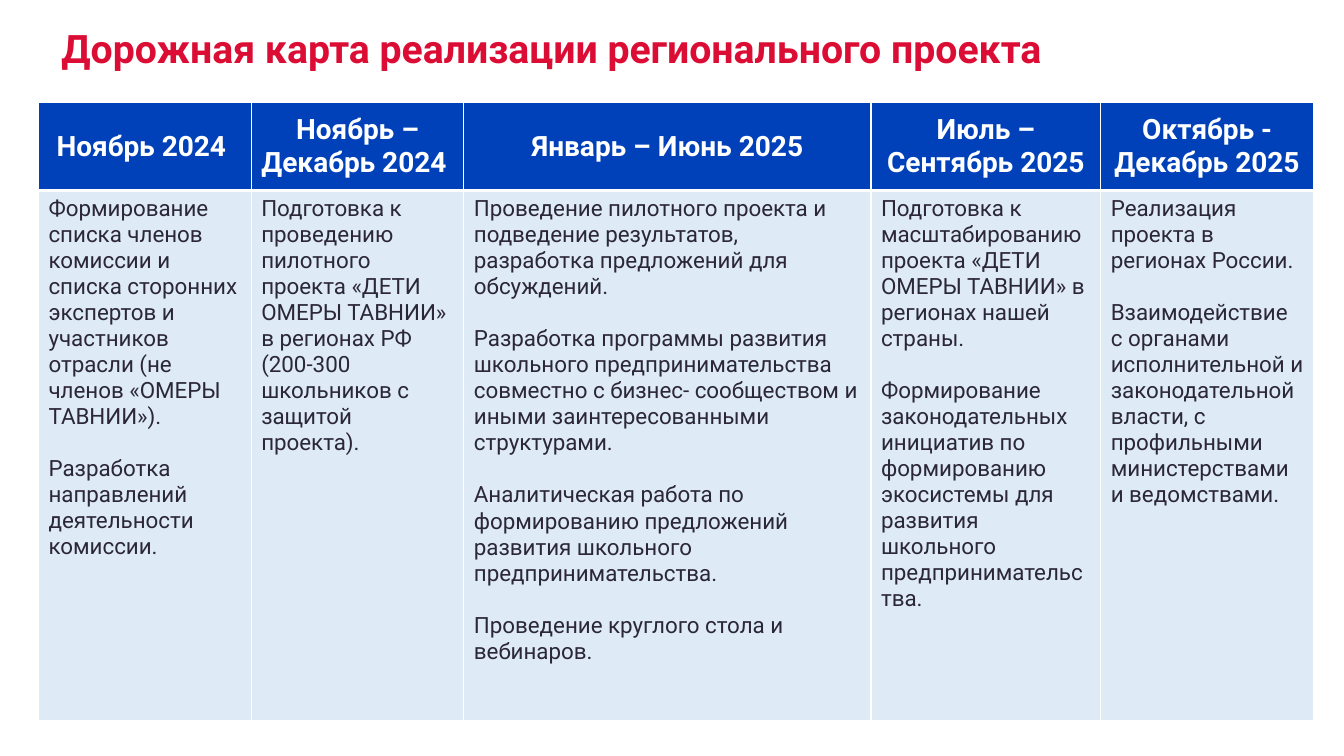
from dataclasses import dataclass

from lxml.etree import SubElement
from pptx import Presentation
from pptx.dml.color import RGBColor
from pptx.enum.text import MSO_ANCHOR, PP_ALIGN
from pptx.oxml.ns import qn
from pptx.util import Cm, Pt


@dataclass(frozen=True)
class Theme:
    font: str = "Roboto"
    red: str = "DB0D35"
    blue: str = "0041BA"
    pale: str = "DEEBF7"
    white: str = "FFFFFF"
    ink: str = "2C2738"
    title_size: float = 28
    head_size: float = 20
    body_size: float = 16
    body_gap: float = 18.75


@dataclass(frozen=True)
class Stage:
    period: str
    width: float
    tasks: tuple[str, ...]


THEME = Theme()
HEAD_HEIGHT, BODY_HEIGHT = 2.21, 13.36

STAGES = [
    Stage("Ноябрь 2024 ", 5.36, (
        "Формирование списка членов комиссии и списка сторонних экспертов и "
        "участников отрасли (не членов «ОМЕРЫ ТАВНИИ»).",
        "Разработка направлений деятельности комиссии.",
    )),
    Stage("Ноябрь – Декабрь 2024 ", 5.36, (
        "Подготовка к проведению пилотного проекта «ДЕТИ ОМЕРЫ ТАВНИИ» "
        "в регионах РФ (200-300 школьников с защитой проекта).",
    )),
    Stage("Январь – Июнь 2025", 10.26, (
        "Проведение пилотного проекта и подведение результатов, "
        "разработка предложений для обсуждений.",
        "Разработка программы развития школьного предпринимательства совместно "
        "с бизнес- сообществом и иными заинтересованными структурами.",
        "Аналитическая работа по формированию предложений развития школьного "
        "предпринимательства.",
        "Проведение круглого стола и вебинаров.",
    )),
    Stage("Июль – Сентябрь 2025", 5.79, (
        "Подготовка к масштабированию проекта «ДЕТИ ОМЕРЫ ТАВНИИ» "
        "в регионах нашей страны.",
        "Формирование законодательных инициатив по формированию экосистемы "
        "для развития школьного предпринимательства.",
    )),
    Stage("Октябрь - Декабрь 2025", 5.36, (
        "Реализация проекта в регионах России.",
        "Взаимодействие с органами исполнительной и законодательной власти, "
        "с профильными министерствами и ведомствами.",
    )),
]


def add_run(p, text: str, size: float, color: str, bold: bool = False) -> None:
    r = p.add_run()
    r.text = text
    r.font.name = THEME.font
    r.font.size = Pt(size)
    r.font.bold = bold
    r.font.color.rgb = RGBColor.from_string(color)


def style_cell(cell, fill: str, borders: dict[str, float]) -> None:
    # Borders go before the fill in the cell properties
    tc_pr = cell._tc.get_or_add_tcPr()
    for side, width in borders.items():
        ln = SubElement(tc_pr, qn(f"a:ln{side}"), w=str(Pt(width)))
        solid = SubElement(ln, qn("a:solidFill"))
        SubElement(solid, qn("a:srgbClr"), val=THEME.white)
    cell.fill.solid()
    cell.fill.fore_color.rgb = RGBColor.from_string(fill)


def add_title(slide, text: str) -> None:
    sp = slide.shapes.add_textbox(Cm(1.3), Cm(0.41), Cm(32.56), Cm(1.75))
    tf = sp.text_frame
    tf.word_wrap = True
    tf.vertical_anchor = MSO_ANCHOR.MIDDLE
    p = tf.paragraphs[0]
    p.line_spacing = 0.9
    add_run(p, text, THEME.title_size, THEME.red, bold=True)


def add_roadmap(slide, stages: list[Stage]) -> None:
    total = sum(stage.width for stage in stages)
    table = slide.shapes.add_table(
        2, len(stages), Cm(0.97), Cm(2.59), Cm(total), Cm(HEAD_HEIGHT + BODY_HEIGHT)
    ).table
    table.rows[0].height = Cm(HEAD_HEIGHT)
    table.rows[1].height = Cm(BODY_HEIGHT)

    for col, stage in enumerate(stages):
        table.columns[col].width = Cm(stage.width)

        # Period
        head = table.cell(0, col)
        style_cell(head, THEME.blue, {"L": 1, "R": 1, "T": 1, "B": 3})
        head.vertical_anchor = MSO_ANCHOR.MIDDLE
        p = head.text_frame.paragraphs[0]
        p.alignment = PP_ALIGN.CENTER
        add_run(p, stage.period, THEME.head_size, THEME.white, bold=True)

        # Tasks
        body = table.cell(1, col)
        style_cell(body, THEME.pale, {"L": 1, "R": 1, "T": 3, "B": 1})
        tf = body.text_frame
        for i, task in enumerate(stage.tasks):
            p = tf.add_paragraph() if i else tf.paragraphs[0]
            p.space_before = Pt(THEME.body_gap if i else 0)
            add_run(p, task, THEME.body_size, THEME.ink)


def main() -> None:
    prs = Presentation()
    prs.slide_width, prs.slide_height = Cm(33.87), Cm(19.05)
    s = prs.slides.add_slide(prs.slide_layouts[6])
    add_title(s, "Дорожная карта реализации регионального проекта")
    add_roadmap(s, STAGES)
    prs.save("out.pptx")


if __name__ == "__main__":
    main()
